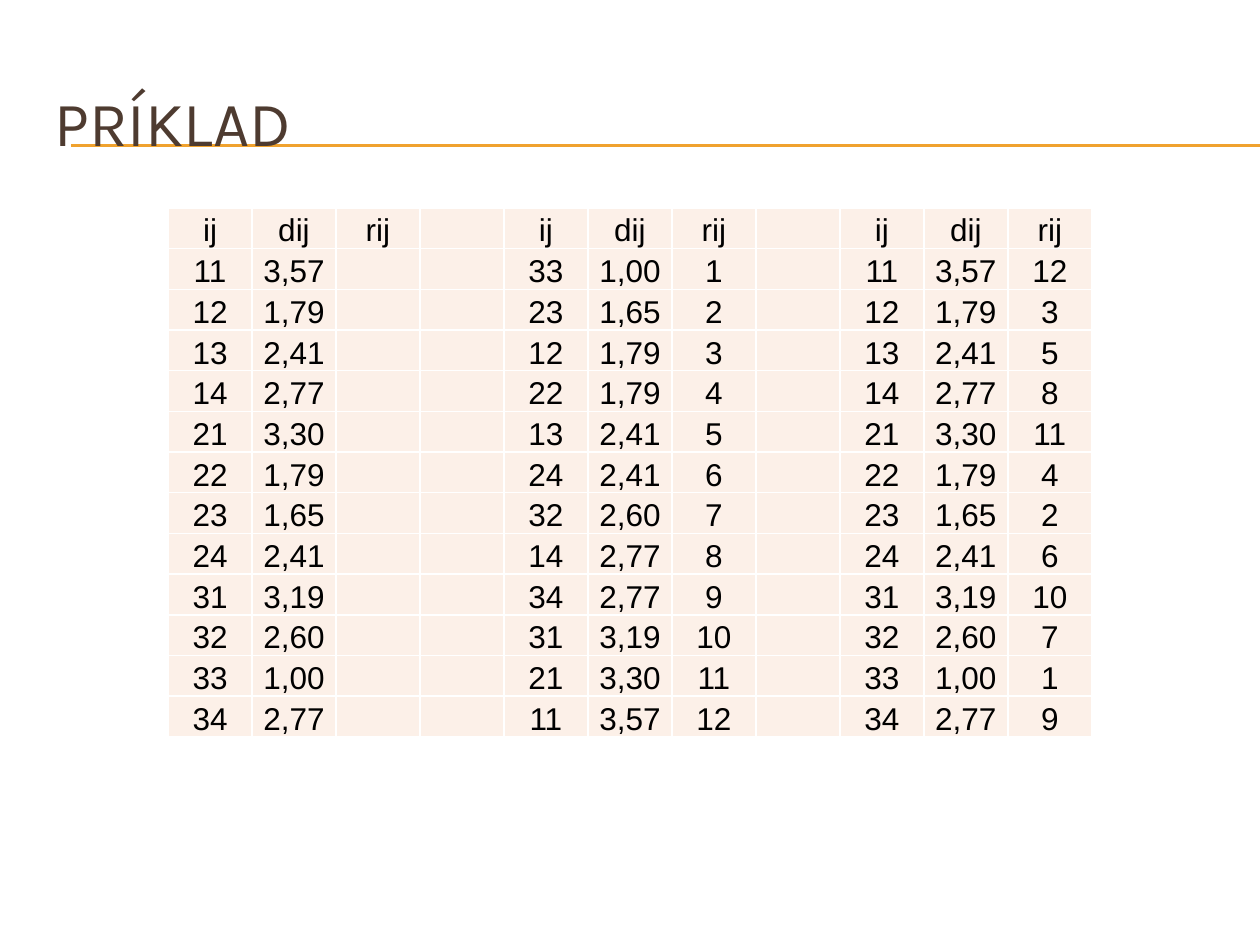
from lxml import etree
from pptx import Presentation, util as u
from pptx.dml.color import RGBColor
from pptx.enum import shapes, text
from pptx.oxml.ns import qn

PX = 914400 / 126
BROWN = RGBColor(0x4E, 0x3B, 0x30)
ORANGE = RGBColor(0xF0, 0xA2, 0x2E)
PEACH = RGBColor(0xFC, 0xF0, 0xE8)
BLACK = RGBColor(0, 0, 0)
WHITE = RGBColor(0xFF, 0xFF, 0xFF)

HEADER = ["ij", "dij", "rij"]
DISTANCES = [
    ("11", "3,57"), ("12", "1,79"), ("13", "2,41"), ("14", "2,77"),
    ("21", "3,30"), ("22", "1,79"), ("23", "1,65"), ("24", "2,41"),
    ("31", "3,19"), ("32", "2,60"), ("33", "1,00"), ("34", "2,77"),
]


def px(n):
    return u.Emu(round(n * PX))


def style_run(r, font, size, color):
    r.font.name = font
    r.font.size = u.Pt(size)
    r.font.color.rgb = color


def add_rule(s, x1, x2, y):
    line = s.shapes.add_connector(shapes.MSO_CONNECTOR.STRAIGHT, px(x1), px(y), px(x2), px(y))
    line.line.color.rgb = ORANGE
    line.line.width = u.Pt(0.75)
    etree.SubElement(line._element.spPr, qn("a:effectLst"))


def add_title(s, title, x, y, w, h):
    sp = s.shapes.add_textbox(px(x), px(y), px(w), px(h))
    tf = sp.text_frame
    tf.word_wrap = True
    tf.vertical_anchor = text.MSO_ANCHOR.MIDDLE
    tf.text = title
    style_run(tf.paragraphs[0].runs[0], "Karla", 36, BROWN)


def set_borders(cell, color, width):
    tc_pr = cell._tc.get_or_add_tcPr()
    for i, side in enumerate(("a:lnL", "a:lnR", "a:lnT", "a:lnB")):
        ln = etree.Element(qn(side), w=str(u.Pt(width)))
        fill = etree.SubElement(ln, qn("a:solidFill"))
        etree.SubElement(fill, qn("a:srgbClr"), val=str(color))
        tc_pr.insert(i, ln)


def fill_cell(cell, value):
    cell.margin_left = cell.margin_right = cell.margin_top = px(1)
    cell.margin_bottom = 0
    cell.vertical_anchor = text.MSO_ANCHOR.BOTTOM
    cell.fill.solid()
    cell.fill.fore_color.rgb = PEACH
    set_borders(cell, WHITE, 1)
    cell.text = value
    p = cell.text_frame.paragraphs[0]
    p.alignment = text.PP_ALIGN.CENTER
    for r in p.runs:
        style_run(r, "Arial", 18, BLACK)


def add_grid(s, rows, x, y, w, h):
    frame = s.shapes.add_table(len(rows), len(rows[0]), px(x), px(y), px(w), px(h))
    table = frame.table
    table.first_row = table.horz_banding = False
    for i, row in enumerate(rows):
        for j, value in enumerate(row):
            fill_cell(table.cell(i, j), value)


def ranking_rows():
    ordered = sorted(DISTANCES, key=lambda pair: pair[1])
    ranks = {ij: str(n) for n, (ij, _) in enumerate(ordered, 1)}
    rows = [HEADER + [""] + HEADER + [""] + HEADER]
    for (ij, d), (sorted_ij, sorted_d) in zip(DISTANCES, ordered):
        rows.append([ij, d, "", "", sorted_ij, sorted_d, ranks[sorted_ij], "", ij, d, ranks[ij]])
    return rows


def main():
    prs = Presentation()
    prs.slide_width, prs.slide_height = px(1260), px(945)
    s = prs.slides.add_slide(prs.slide_layouts[6])
    for y in (145, 146):
        add_rule(s, 71, 1260, y)
    add_title(s, "PRÍKLAD", 42, 63, 1197, 116)
    add_grid(s, ranking_rows(), 168, 208, 924, 529)
    prs.save("out.pptx")


if __name__ == "__main__":
    main()
